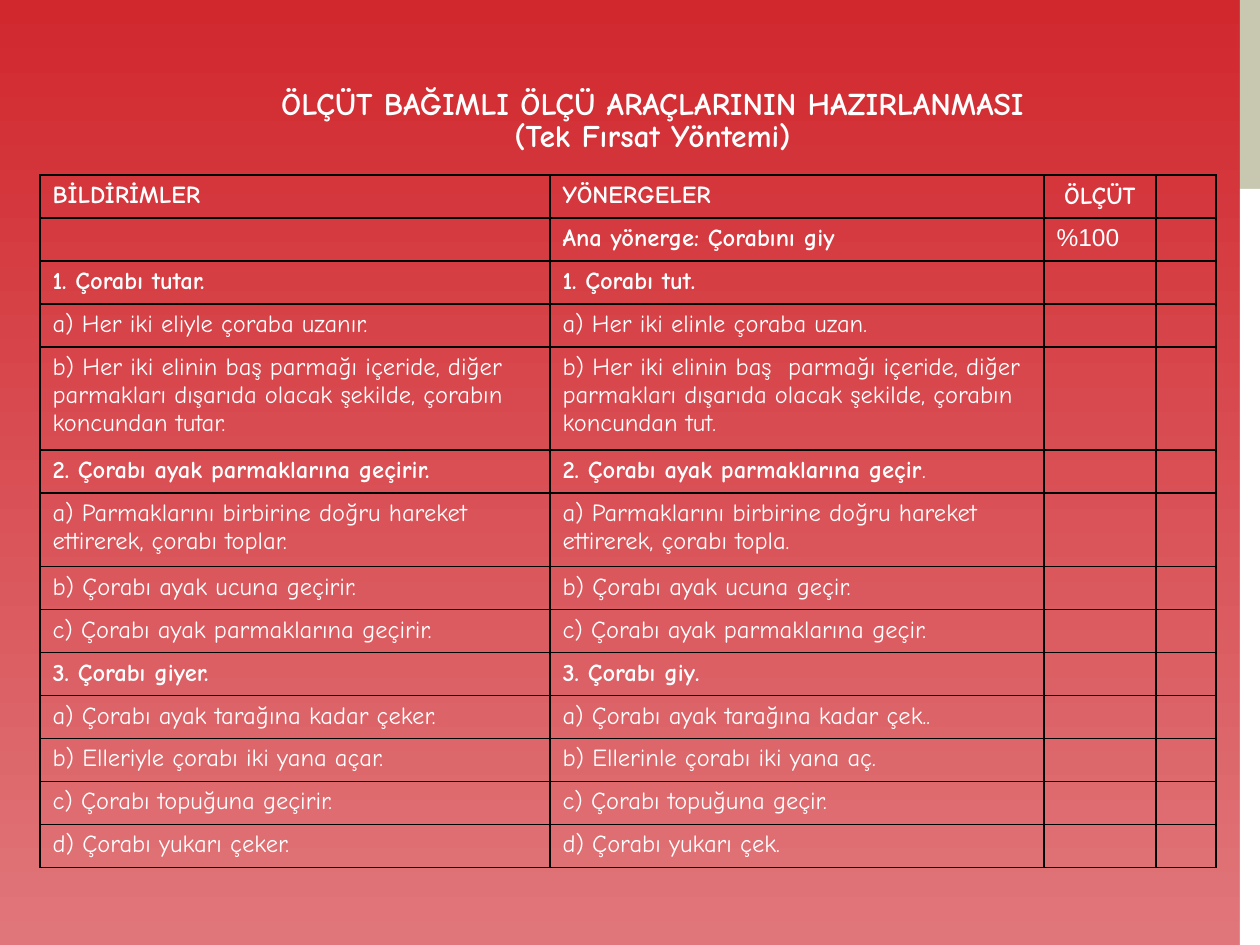
from lxml import etree
from pptx import Presentation
from pptx import util as u
from pptx.dml.color import RGBColor
from pptx.enum import shapes, text
from pptx.oxml.ns import qn

PX = 914400 // 126
THEME = {
    "top": "D1282E", "bottom": "E0767A", "ink": "FFFFFF", "rule": "000000",
    "bars": ("C8C8B1", "FFFFFF"),
    "font": "Comic Neue", "plain": "Arial",
    "title": u.Pt(18), "body": u.Pt(14), "line": u.Pt(1),
}


def add_run(p, words, size, bold, font=THEME["font"]):
    r = p.add_run()
    r.text = words
    for name, value in {"name": font, "size": size, "bold": bold}.items():
        setattr(r.font, name, value)
    r.font.color.rgb = RGBColor.from_string(THEME["ink"])


def add_borders(cell):
    tc_pr = cell._tc.get_or_add_tcPr()
    for at, side in enumerate(("lnL", "lnR", "lnT", "lnB")):
        ln = etree.Element(qn(f"a:{side}"), w=str(THEME["line"]))
        fill = etree.SubElement(ln, qn("a:solidFill"))
        etree.SubElement(fill, qn("a:srgbClr"), val=THEME["rule"])
        tc_pr.insert(at, ln)


prs = Presentation()
prs.slide_width, prs.slide_height = 1260 * PX, 945 * PX
s = prs.slides.add_slide(prs.slide_layouts[6])

# Background
fill = s.background.fill
fill.gradient()
fill.gradient_angle = 270
for stop, name, position in zip(fill.gradient_stops, ("top", "bottom"), (0, 1)):
    stop.color.rgb = RGBColor.from_string(THEME[name])
    stop.position = position

# Side bars
for (top, height), color in zip(((0, 189), (189, 756)), THEME["bars"]):
    sp = s.shapes.add_shape(shapes.MSO_SHAPE.RECTANGLE,
                            1240 * PX, top * PX, 20 * PX, height * PX)
    sp.shadow.inherit = False
    sp.fill.solid()
    sp.fill.fore_color.rgb = RGBColor.from_string(color)
    sp.line.fill.background()

# Title
tf = s.shapes.add_textbox(144 * PX, 69 * PX, 1017 * PX, 106 * PX).text_frame
tf.word_wrap = True
tf.vertical_anchor = text.MSO_ANCHOR.MIDDLE
title = ("ÖLÇÜT BAĞIMLI ÖLÇÜ ARAÇLARININ HAZIRLANMASI", "(Tek Fırsat Yöntemi)")
for i, words in enumerate(title):
    p = tf.add_paragraph() if i else tf.paragraphs[0]
    p.alignment = text.PP_ALIGN.CENTER
    p.line_spacing = 0.85
    add_run(p, words, THEME["title"], True)

# Criterion table: statements, instructions, criterion, result
ROWS = [
    ("BİLDİRİMLER", "YÖNERGELER", "ÖLÇÜT", ""),
    ("", "Ana yönerge: Çorabını giy", "%100", ""),
    ("1. Çorabı tutar.", "1. Çorabı tut.", "", ""),
    ("a) Her iki eliyle çoraba uzanır.", "a) Her iki elinle çoraba uzan.", "", ""),
    ("b) Her iki elinin baş parmağı içeride, diğer parmakları dışarıda "
     "olacak şekilde, çorabın koncundan tutar.",
     "b) Her iki elinin baş  parmağı içeride, diğer parmakları dışarıda "
     "olacak şekilde, çorabın koncundan tut.", "", ""),
    ("2. Çorabı ayak parmaklarına geçirir.",
     "2. Çorabı ayak parmaklarına geçir", "", ""),
    ("a) Parmaklarını birbirine doğru hareket ettirerek, çorabı toplar.",
     "a) Parmaklarını birbirine doğru hareket ettirerek, çorabı topla.", "", ""),
    ("b) Çorabı ayak ucuna geçirir.", "b) Çorabı ayak ucuna geçir.", "", ""),
    ("c) Çorabı ayak parmaklarına geçirir.",
     "c) Çorabı ayak parmaklarına geçir.", "", ""),
    ("3. Çorabı giyer.", "3. Çorabı giy.", "", ""),
    ("a) Çorabı ayak tarağına kadar çeker.",
     "a) Çorabı ayak tarağına kadar çek..", "", ""),
    ("b) Elleriyle çorabı iki yana açar.", "b) Ellerinle çorabı iki yana aç.", "", ""),
    ("c) Çorabı topuğuna geçirir.", "c) Çorabı topuğuna geçir.", "", ""),
    ("d) Çorabı yukarı çeker.", "d) Çorabı yukarı çek.", "", ""),
]
WIDTHS = (510, 494, 112, 60)
ROW_HEIGHT, TALL_ROWS = 43, {4: 103, 6: 74}
heights = [TALL_ROWS.get(i, ROW_HEIGHT) for i in range(len(ROWS))]

table = s.shapes.add_table(len(ROWS), len(WIDTHS), 40 * PX, 175 * PX,
                           sum(WIDTHS) * PX, sum(heights) * PX).table
table.first_row = table.horz_banding = False
for column, width in zip(table.columns, WIDTHS):
    column.width = width * PX
for i, (row, height) in enumerate(zip(ROWS, heights)):
    table.rows[i].height = height * PX
    bold = i < 2 or row[0][0].isdigit()
    for j, words in enumerate(row):
        cell = table.cell(i, j)
        cell.fill.background()
        add_borders(cell)
        p = cell.text_frame.paragraphs[0]
        if not words:
            # An empty cell keeps the body size so that its row does not grow
            etree.SubElement(p._p, qn("a:endParaRPr"),
                             sz=str(THEME["body"].centipoints))
        elif words == "%100":
            add_run(p, words, THEME["body"], False, THEME["plain"])
        else:
            add_run(p, words, THEME["body"], bold)

for j in range(2):
    table.cell(0, j).text_frame.paragraphs[0].alignment = text.PP_ALIGN.JUSTIFY
criterion = table.cell(0, 2)
criterion.vertical_anchor = text.MSO_ANCHOR.MIDDLE
criterion.text_frame.paragraphs[0].alignment = text.PP_ALIGN.CENTER
add_run(table.cell(5, 1).text_frame.paragraphs[0], ".", THEME["body"], False)

prs.save("out.pptx")
